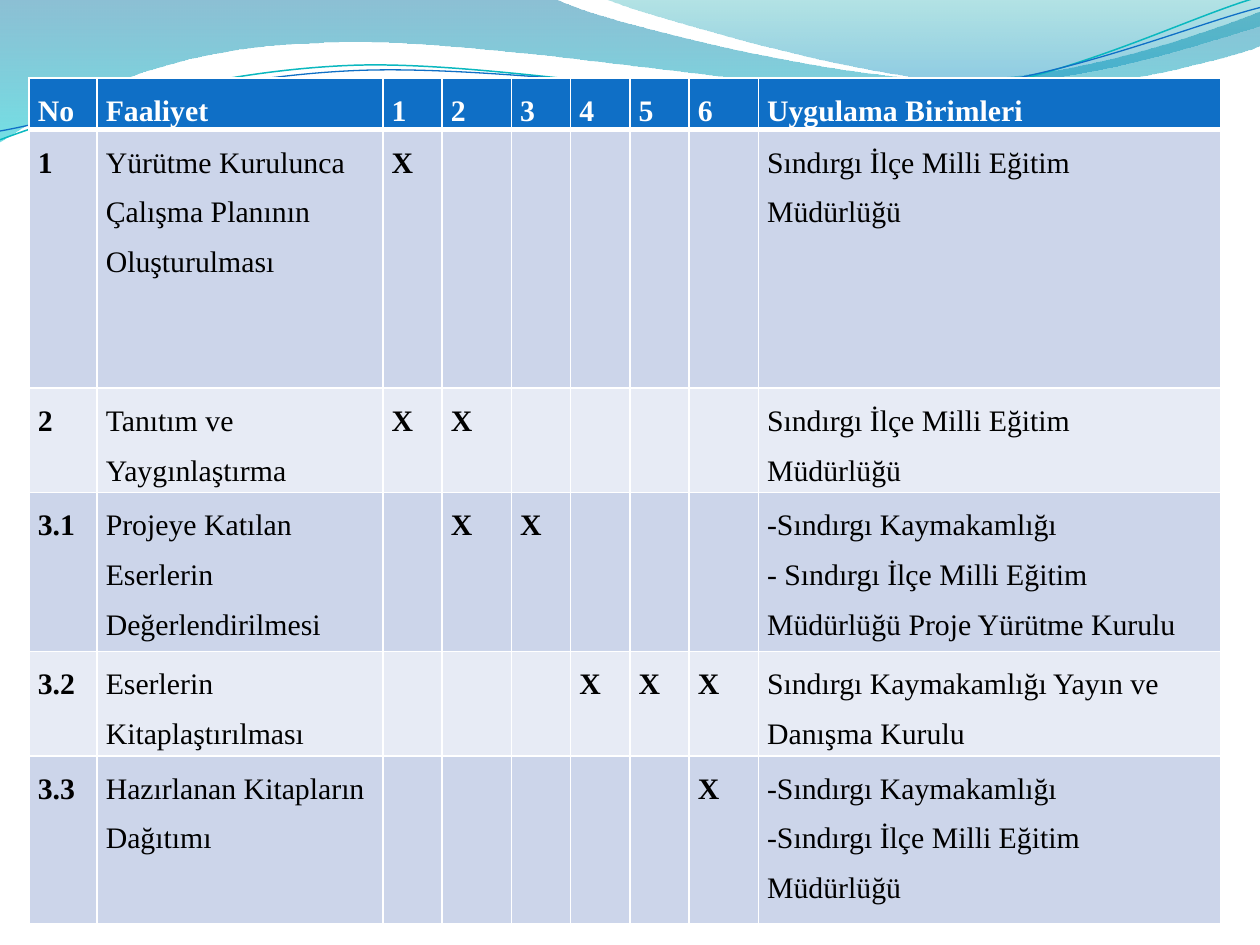
from lxml.etree import SubElement
from pptx import Presentation
from pptx.dml.color import RGBColor
from pptx.oxml.ns import qn
from pptx.util import Inches, Pt

COLORS = {"header": "0F6FC6", "band_dark": "CCD5EA", "band_light": "E7EBF5",
          "white": "FFFFFF", "black": "000000", "teal": "0AB8BF",
          "deep_blue": "0074A1", "cyan": "00C6CF", "sea": "00A1A9", "sky": "008BBF"}
FONT = "Times New Roman"
MONTHS = range(1, 7)
HEADERS = ["No", "Faaliyet", *map(str, MONTHS), "Uygulama Birimleri"]
ACTIVITIES = [
    ("1", "Yürütme Kurulunca Çalışma Planının Oluşturulması", {1},
     ["Sındırgı İlçe Milli Eğitim Müdürlüğü"]),
    ("2", "Tanıtım ve Yaygınlaştırma", {1, 2},
     ["Sındırgı İlçe Milli Eğitim Müdürlüğü"]),
    ("3.1", "Projeye Katılan Eserlerin Değerlendirilmesi", {2, 3},
     ["-Sındırgı Kaymakamlığı",
      "- Sındırgı İlçe Milli Eğitim Müdürlüğü Proje Yürütme Kurulu"]),
    ("3.2", "Eserlerin Kitaplaştırılması", {4, 5, 6},
     ["Sındırgı Kaymakamlığı Yayın ve Danışma Kurulu"]),
    ("3.3", "Hazırlanan Kitapların Dağıtımı", {6},
     ["-Sındırgı Kaymakamlığı", "-Sındırgı İlçe Milli Eğitim Müdürlüğü"]),
]
COLUMN_WIDTHS = [0.54, 2.27, 0.47, 0.55, 0.47, 0.47, 0.47, 0.55, 3.67]
ROW_HEIGHTS = [0.41, 2.05, 0.83, 1.26, 0.83, 1.33]

FILLED_WAVES = [
    ([(0, 0), (4.4, -0.01),
      (4.76, 0.17, 6.64, 0.63, 7.58, 0.63), (8.53, 0.63, 9.58, 0.26, 10, 0.09),
      (10.01, 0.36),
      (9.83, 0.44, 8.7, 0.76, 7.46, 0.75), (6.22, 0.75, 3.82, 0.28, 2.57, 0.34),
      (1.29, 0.36, 0.46, 0.83, -0.01, 1.13)],
     [("deep_blue", 45), ("cyan", 55)]),
    ([(4.79, -0.01),
      (5.09, 0.11, 6.82, 0.62, 7.69, 0.65), (8.56, 0.69, 9.61, 0.32, 10, 0.21),
      (10, 0)],
     [("sea", 30), ("sky", 45)]),
]
LINE_WAVES = [
    ([(0, 1.11), (0.48, 0.93, 1.58, 0.57, 2.77, 0.52),
      (3.95, 0.47, 5.93, 0.89, 7.13, 0.8), (8.33, 0.71, 9.38, 0.15, 9.98, -0.02)],
     "teal", 0.85),
    ([(0, 1.04), (0.47, 0.96, 1.64, 0.61, 2.83, 0.56),
      (4.03, 0.51, 5.97, 0.84, 7.17, 0.75), (8.36, 0.67, 9.41, 0.21, 10, 0.06)],
     "header", 0.75),
]
UNITS_PER_INCH = 100


def rgb(name):
    return RGBColor.from_string(COLORS[name])


def add_wave(slide, segments, close):
    segments = [[round(value * UNITS_PER_INCH) for value in segment] for segment in segments]
    anchors = [segment[-2:] for segment in segments]
    left, top = (min(values) for values in zip(*anchors))
    builder = slide.shapes.build_freeform(*anchors[0], scale=Inches(1) / UNITS_PER_INCH)
    builder.add_line_segments(anchors[1:], close=close)
    shape = builder.convert_to_shape()
    shape.shadow.inherit = False
    lines = list(shape.element.iter(qn("a:lnTo")))
    for line, segment in zip(lines, segments[1:]):
        if len(segment) == 6:
            line.tag = qn("a:cubicBezTo")
            for child in list(line):
                line.remove(child)
            for x, y in zip(segment[::2], segment[1::2]):
                SubElement(line, qn("a:pt"), x=str(x - left), y=str(y - top))
    return shape


def add_filled_wave(slide, segments, stops):
    shape = add_wave(slide, segments, True)
    shape.line.fill.background()
    shape.fill.gradient()
    shape.fill.gradient_angle = 270
    for position, (stop, (color, opacity)) in enumerate(zip(shape.fill.gradient_stops, stops)):
        stop.position = position
        stop.color.rgb = rgb(color)
    for element, (color, opacity) in zip(shape.element.iter(qn("a:srgbClr")), stops):
        SubElement(element, qn("a:alpha"), val=str(opacity * 1000))


def add_line_wave(slide, segments, color, width):
    shape = add_wave(slide, segments, False)
    shape.fill.background()
    shape.line.color.rgb = rgb(color)
    shape.line.width = Pt(width)


def set_borders(cell, row_index):
    widths = {"lnL": 1, "lnR": 1, "lnT": 3 if row_index == 1 else 1,
              "lnB": 3 if row_index == 0 else 1}
    properties = cell._tc.get_or_add_tcPr()
    for tag, width in widths.items():
        border = SubElement(properties, qn(f"a:{tag}"), w=str(Pt(width)))
        fill = SubElement(border, qn("a:solidFill"))
        SubElement(fill, qn("a:srgbClr"), val=COLORS["white"])


def fill_cell(cell, lines, row_index, bold):
    set_borders(cell, row_index)
    fill_name = "header" if row_index == 0 else ("band_light", "band_dark")[row_index % 2]
    cell.fill.solid()
    cell.fill.fore_color.rgb = rgb(fill_name)
    cell.margin_left = cell.margin_right = Inches(0.07)
    cell.margin_top = cell.margin_bottom = 0
    frame = cell.text_frame
    for index, line in enumerate(lines):
        paragraph = frame.add_paragraph() if index else frame.paragraphs[0]
        paragraph.line_spacing = 1.5
        run = paragraph.add_run()
        run.text = line
        run.font.name = FONT
        run.font.size = Pt(17)
        run.font.bold = bold
        run.font.color.rgb = rgb("black" if row_index else "white")


def add_schedule(slide):
    rows = [[[header] for header in HEADERS]]
    for number, activity, active_months, units in ACTIVITIES:
        marks = [["X"] if month in active_months else [] for month in MONTHS]
        rows.append([[number], [activity], *marks, units])
    table = slide.shapes.add_table(
        len(rows), len(HEADERS), Inches(0.23), Inches(0.62),
        Inches(sum(COLUMN_WIDTHS)), Inches(sum(ROW_HEIGHTS))).table
    for column, width in zip(table.columns, COLUMN_WIDTHS):
        column.width = Inches(width)
    for row, height in zip(table.rows, ROW_HEIGHTS):
        row.height = Inches(height)
    text_columns = (1, len(HEADERS) - 1)
    for row_index, row in enumerate(rows):
        for column_index, lines in enumerate(row):
            bold = row_index == 0 or column_index not in text_columns
            fill_cell(table.cell(row_index, column_index), lines, row_index, bold)


def main():
    presentation = Presentation()
    presentation.slide_width = Inches(10)
    presentation.slide_height = Inches(7.5)
    slide = presentation.slides.add_slide(presentation.slide_layouts[6])
    for wave in FILLED_WAVES:
        add_filled_wave(slide, *wave)
    for wave in LINE_WAVES:
        add_line_wave(slide, *wave)
    add_schedule(slide)
    presentation.save("out.pptx")


if __name__ == "__main__":
    main()
